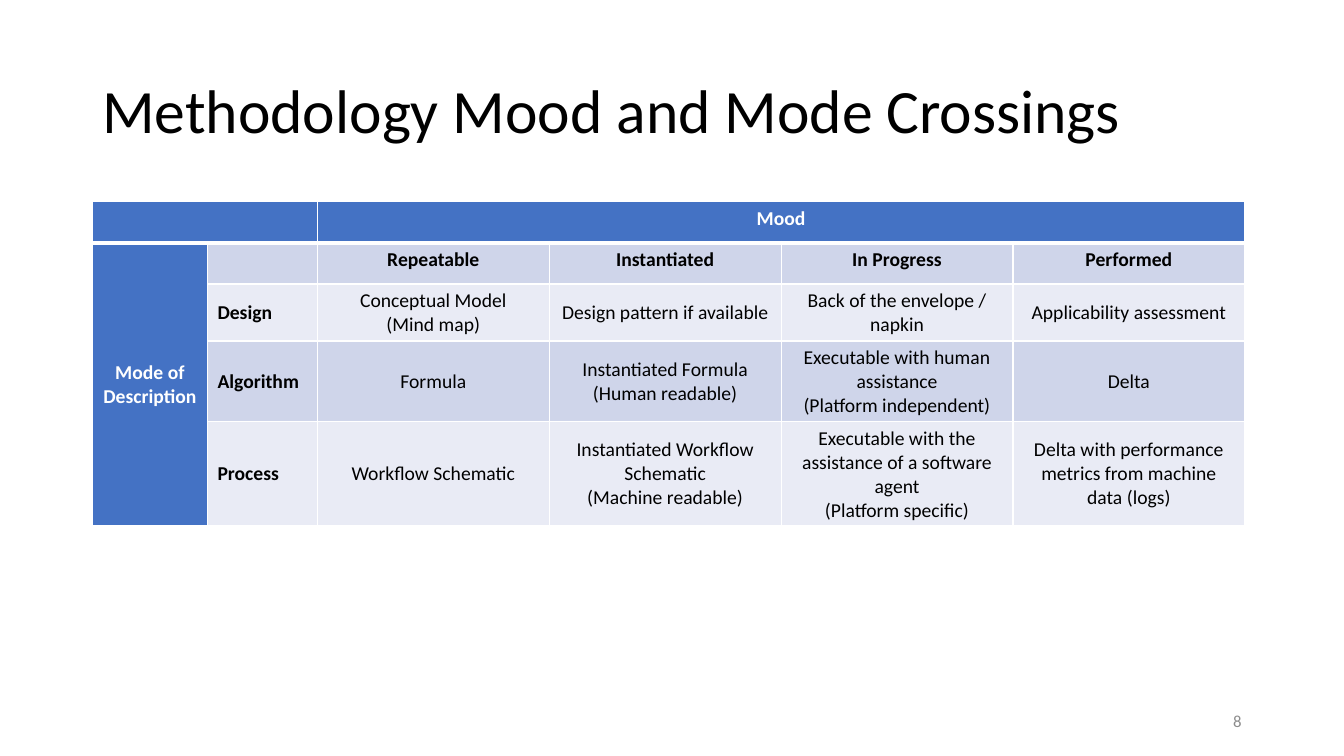
from typing import NamedTuple

from lxml import etree
from pptx import Presentation
from pptx import util as u
from pptx.dml.color import RGBColor
from pptx.enum import text
from pptx.oxml.ns import qn

# The slide is a grid of 160 columns by 90 rows.
UNIT = u.Inches(1 / 12)
FONT = "Calibri"
BLACK, WHITE, GREY = "000000", "FFFFFF", "8C8C8C"
BLUE, BAND_DARK, BAND_LIGHT = "4472C4", "CFD5EA", "E9EBF5"
LEFT, CENTER, RIGHT = text.PP_ALIGN.LEFT, text.PP_ALIGN.CENTER, text.PP_ALIGN.RIGHT
TOP, MIDDLE = text.MSO_ANCHOR.TOP, text.MSO_ANCHOR.MIDDLE


class Box(NamedTuple):
    col: float
    row: float
    cols: float
    rows: float


class Mode(NamedTuple):
    name: str
    moods: tuple[str, ...]


TITLE_BOX = Box(11, 4.8, 138, 17.4)
NUMBER_BOX = Box(113, 83.4, 36, 4.8)
COL_WIDTHS = [13.7, 13.1] + [27.6] * 4
ROW_HEIGHT = 4.9
TABLE_BOX = Box(11, 24, sum(COL_WIDTHS), 5 * ROW_HEIGHT)

MODES = [
    Mode("", ("Repeatable", "Instantiated", "In Progress", "Performed")),
    Mode("Design", ("Conceptual Model\n(Mind map)", "Design pattern if available",
                    "Back of the envelope / napkin", "Applicability assessment")),
    Mode("Algorithm", ("Formula", "Instantiated Formula\n(Human readable)",
                       "Executable with human assistance\n(Platform independent)", "Delta")),
    Mode("Process", ("Workflow Schematic",
                     "Instantiated Workflow Schematic\n(Machine readable)",
                     "Executable with the assistance of a software agent\n(Platform specific)",
                     "Delta with performance metrics from machine data (logs)")),
]


def grid(n: float) -> int:
    return round(n * UNIT)


def rgb(value: str) -> RGBColor:
    return RGBColor.from_string(value)


def write(tf, words: str, size: float = 14, color: str = BLACK, bold: bool = False,
          align=CENTER, spacing: float = 1.0) -> None:
    """Fill the first paragraph, with a line break at each newline."""
    p = tf.paragraphs[0]
    p.alignment, p.line_spacing = align, spacing
    for i, line in enumerate(words.split("\n")):
        if i:
            p.add_line_break()
        r = p.add_run()
        r.text = line
        r.font.name, r.font.size, r.font.bold = FONT, u.Pt(size), bold
        r.font.color.rgb = rgb(color)


def add_text(slide, box: Box, words: str, **fmt) -> None:
    sp = slide.shapes.add_textbox(*map(grid, box))
    tf = sp.text_frame
    tf.word_wrap, tf.vertical_anchor = True, MIDDLE
    write(tf, words, **fmt)


def style_cell(cell, fill: str, top: float = 1, bottom: float = 1) -> None:
    """Set white borders, with widths in points, and the fill."""
    tc_pr = cell._tc.get_or_add_tcPr()
    for side, width in (("L", 1), ("R", 1), ("T", top), ("B", bottom)):
        ln = etree.SubElement(tc_pr, qn(f"a:ln{side}"), w=str(u.Pt(width)))
        solid = etree.SubElement(ln, qn("a:solidFill"))
        etree.SubElement(solid, qn("a:srgbClr"), val=WHITE)
    cell.fill.solid()
    cell.fill.fore_color.rgb = rgb(fill)


def fill_cell(cell, words: str, anchor=MIDDLE, **fmt) -> None:
    cell.vertical_anchor = anchor
    write(cell.text_frame, words, **fmt)


def add_crossings(slide) -> None:
    table = slide.shapes.add_table(len(MODES) + 1, len(COL_WIDTHS),
                                   *map(grid, TABLE_BOX)).table
    for column, width in zip(table.columns, COL_WIDTHS):
        column.width = grid(width)
    for row in table.rows:
        row.height = grid(ROW_HEIGHT)

    for i, row in enumerate(table.rows):
        band = BAND_DARK if i % 2 else BAND_LIGHT
        for j, cell in enumerate(row.cells):
            style_cell(cell, BLUE if i == 0 or j == 0 else band,
                       top=3 if i == 1 else 1, bottom=3 if i == 0 else 1)

    table.cell(0, 0).merge(table.cell(0, 1))
    table.cell(0, 2).merge(table.cell(0, 5))
    table.cell(1, 0).merge(table.cell(4, 0))
    fill_cell(table.cell(0, 2), "Mood", anchor=TOP, color=WHITE, bold=True)
    fill_cell(table.cell(1, 0), "Mode of Description", color=WHITE, bold=True)

    for i, mode in enumerate(MODES, start=1):
        heading = not mode.name
        if mode.name:
            fill_cell(table.cell(i, 1), mode.name, bold=True, align=LEFT)
        for j, words in enumerate(mode.moods, start=2):
            fill_cell(table.cell(i, j), words, bold=heading,
                      anchor=TOP if heading else MIDDLE)


def main() -> None:
    prs = Presentation()
    prs.slide_width, prs.slide_height = grid(160), grid(90)
    slide = prs.slides.add_slide(prs.slide_layouts[6])
    add_text(slide, TITLE_BOX, "Methodology Mood and Mode Crossings",
             size=44, align=LEFT, spacing=0.9)
    add_crossings(slide)
    add_text(slide, NUMBER_BOX, "8", size=12, color=GREY, align=RIGHT)
    prs.save("out.pptx")


if __name__ == "__main__":
    main()
